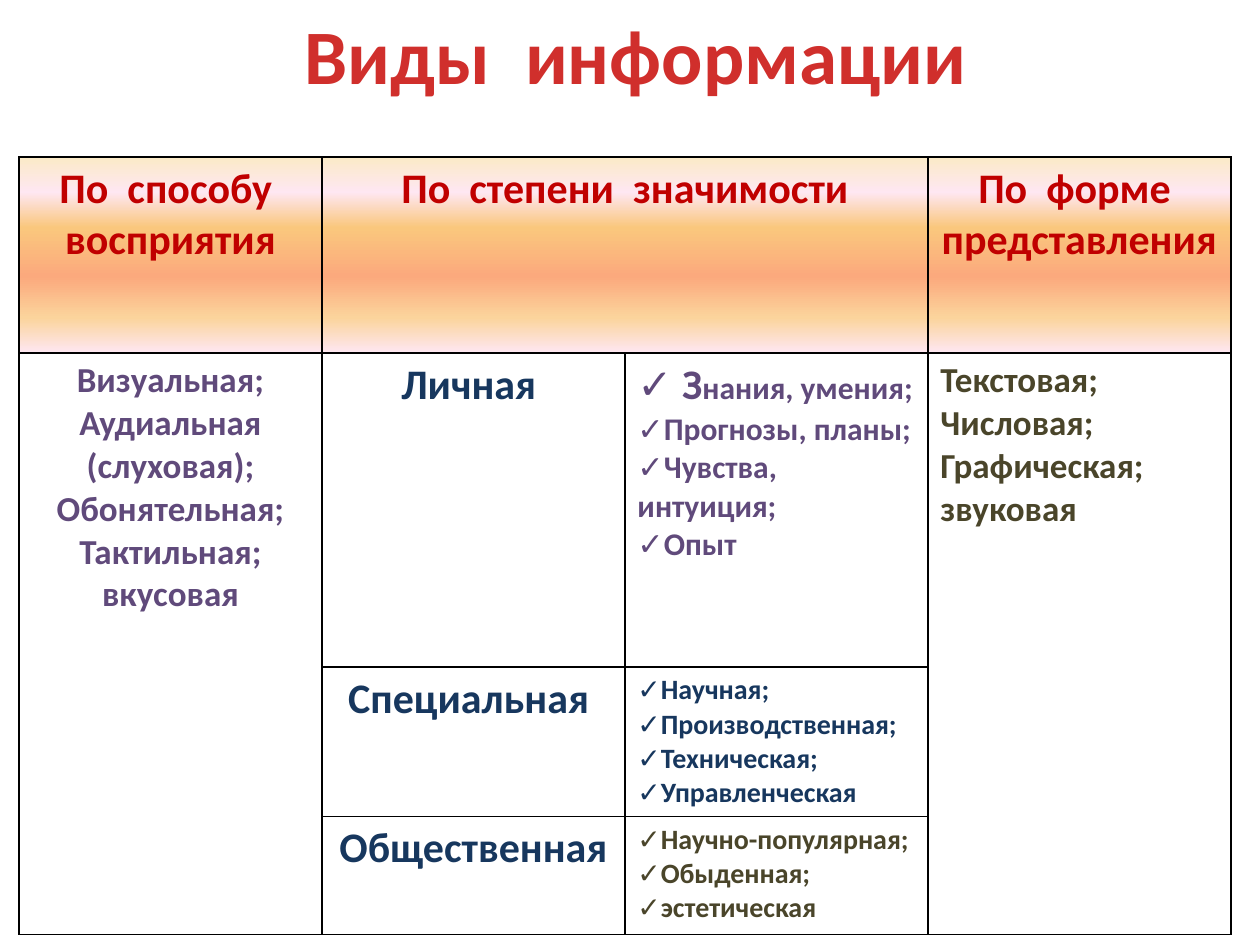
import pptx
import pptx.dml.color
import pptx.enum.text
import pptx.oxml
import pptx.oxml.ns
import pptx.util
from lxml import etree

PX = 914400 // 126
FONT = "Calibri"
PURPLE, NAVY, OLIVE, RED = "604A7B", "17375E", "4A452A", "C00000"
TITLE_STOPS = [(0, "FC7C7A"), (75, "D02F2C"), (100, "C70500")]
HEADER_STOPS = [(0, "FBEAC7"), (18, "FEE7F2"), (36, "FAC77D"),
                (61, "FBA97D"), (82, "FBD49C"), (100, "FEE7F2")]
CENTER = pptx.enum.text.PP_ALIGN.CENTER
LEFT = pptx.enum.text.PP_ALIGN.LEFT


def px(length):
    return pptx.util.Emu(length * PX)


def color(value):
    return pptx.dml.color.RGBColor.from_string(value)


def add_child(parent, tag, **attributes):
    return etree.SubElement(parent, pptx.oxml.ns.qn(tag), attributes)


def set_gradient(fill, properties, stops):
    fill.gradient()
    fill.gradient_angle = 270
    stop_list = properties.find(".//" + pptx.oxml.ns.qn("a:gsLst"))
    for stop in list(stop_list):
        stop_list.remove(stop)
    for position, value in stops:
        stop = add_child(stop_list, "a:gs", pos=str(position * 1000))
        add_child(stop, "a:srgbClr", val=value)


def format_run(run, size, value):
    run.font.name = FONT
    run.font.size = pptx.util.Pt(size)
    run.font.bold = True
    run.font.color.rgb = color(value)


def add_title(slide, text):
    title = slide.shapes.title
    title.left, title.top, title.width, title.height = px(69), px(0), px(1134), px(108)
    title.text_frame.text = text
    title.text_frame.vertical_anchor = pptx.enum.text.MSO_ANCHOR.MIDDLE
    paragraph = title.text_frame.paragraphs[0]
    paragraph.alignment = CENTER
    run = paragraph.runs[0]
    format_run(run, 44, "D02F2C")
    set_gradient(run.font.fill, run.font._element, TITLE_STOPS)


def set_borders(cell):
    properties = cell._tc.get_or_add_tcPr()
    for tag in ("a:lnL", "a:lnR", "a:lnT", "a:lnB"):
        line = add_child(properties, tag, w="12700")
        add_child(add_child(line, "a:solidFill"), "a:srgbClr", val="000000")


def add_bullet(paragraph):
    properties = paragraph._p.get_or_add_pPr()
    properties.set("marL", "0")
    properties.set("indent", "0")
    add_child(properties, "a:buFont", typeface=FONT)
    add_child(properties, "a:buChar", char="✓")


def fill_cell(cell, lines, size, value, alignment=LEFT, bullets=False):
    cell.text_frame.text = "\n".join(lines)
    for paragraph in cell.text_frame.paragraphs:
        paragraph.alignment = alignment
        for run in paragraph.runs:
            format_run(run, size, value)
        if bullets:
            add_bullet(paragraph)


def add_table(slide):
    widths, heights = [303] * 4, [196, 314, 149, 118]
    frame = slide.shapes.add_table(4, 4, px(19), px(157), px(sum(widths)), px(sum(heights)))
    table = frame.table
    table.first_row = table.horz_banding = False
    for column, width in zip(table.columns, widths):
        column.width = px(width)
    for row, height in zip(table.rows, heights):
        row.height = px(height)
    for row_index, row in enumerate(table.rows):
        for cell in row.cells:
            set_borders(cell)
            if row_index == 0:
                set_gradient(cell.fill, cell._tc.tcPr, HEADER_STOPS)
            else:
                cell.fill.background()
    table.cell(0, 1).merge(table.cell(0, 2))
    for column in (0, 3):
        table.cell(1, column).merge(table.cell(3, column))
    return table


def fill_table(table):
    headers = {0: "По  способу  восприятия", 1: "По  степени  значимости",
               3: "По  форме  представления"}
    for column, text in headers.items():
        fill_cell(table.cell(0, column), [text], 24, RED, CENTER)

    perception = ["Визуальная;", "Аудиальная (слуховая);", "Обонятельная;",
                  "Тактильная;", "вкусовая"]
    fill_cell(table.cell(1, 0), perception, 20, PURPLE, CENTER)
    forms = ["Текстовая;", "Числовая;", "Графическая;", "звуковая"]
    fill_cell(table.cell(1, 3), forms, 20, OLIVE)

    significance = [
        ("Личная ", [" З", "Прогнозы, планы;", "Чувства, интуиция;", "Опыт"], 18, PURPLE),
        ("Специальная ", ["Научная;", "Производственная;", "Техническая;",
                          "Управленческая"], 16, NAVY),
        ("Общественная", ["Научно-популярная;", "Обыденная;", "эстетическая"], 16, OLIVE),
    ]
    for row, (name, examples, size, value) in enumerate(significance, start=1):
        fill_cell(table.cell(row, 1), [name], 24, NAVY, CENTER)
        fill_cell(table.cell(row, 2), examples, size, value, bullets=True)

    knowledge = table.cell(1, 2).text_frame.paragraphs[0]
    knowledge.runs[0].font.size = pptx.util.Pt(24)
    ending = knowledge.add_run()
    ending.text = "нания, умения;"
    format_run(ending, 18, PURPLE)


def main():
    presentation = pptx.Presentation()
    presentation.slide_width, presentation.slide_height = px(1260), px(945)
    slide = presentation.slides.add_slide(presentation.slide_layouts[5])
    add_title(slide, "Виды  информации")
    fill_table(add_table(slide))
    presentation.save("out.pptx")


if __name__ == "__main__":
    main()
